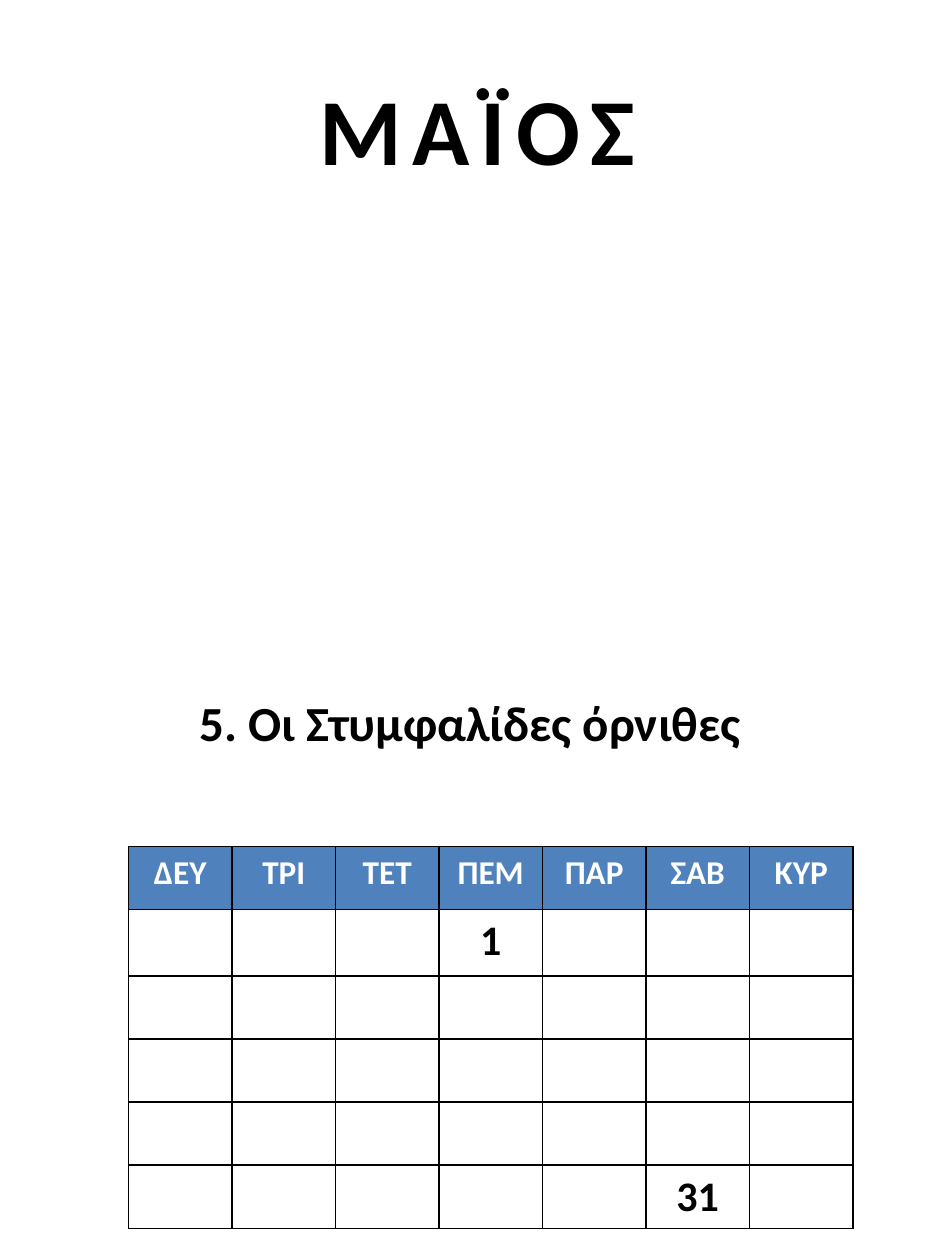
from lxml.etree import SubElement
from pptx import Presentation
from pptx.dml.color import RGBColor
from pptx.enum.text import MSO_ANCHOR, MSO_AUTO_SIZE, PP_ALIGN
from pptx.oxml import parse_xml
from pptx.oxml.ns import nsdecls, qn
from pptx.util import Pt

BLACK = RGBColor(0, 0, 0)
WHITE = RGBColor(255, 255, 255)
BLUE = RGBColor(0x4F, 0x81, 0xBD)

DAYS = ["ΔΕΥ", "ΤΡΙ", "ΤΕΤ", "ΠΕΜ", "ΠΑΡ", "ΣΑΒ", "ΚΥΡ"]
DATES = {(1, 3): "1", (5, 5): "31"}
ROW_HEIGHTS = [36, 38, 36, 36, 36, 36]
COLUMN_WIDTH = 59.14


def write(frame, text, size, color):
    """Write one centred bold line and return its run."""
    para = frame.paragraphs[0]
    para.alignment = PP_ALIGN.CENTER
    span = para.add_run()
    span.text = text
    span.font.color.rgb = color
    for name, value in {"name": "Calibri", "size": Pt(size), "bold": True}.items():
        setattr(span.font, name, value)
    return span


def line_xml(tag):
    """Return a black line of 1 pt under the given tag."""
    return parse_xml(
        f'<a:{tag} {nsdecls("a")} w="12700"><a:solidFill>'
        f'<a:srgbClr val="{BLACK}"/></a:solidFill></a:{tag}>'
    )


deck = Presentation()
deck.slide_width, deck.slide_height = Pt(540), Pt(720)
page = deck.slides.add_slide(deck.slide_layouts[5])

# Month title and the name of the labour
title = page.shapes.title
subtitle = page.shapes.add_textbox(0, 0, Pt(1), Pt(1))
for box, left, top, width, height in [
    (title, 43.2, 36.7, 459.4, 72.7),
    (subtitle, 82.8, 392.4, 371.5, 41),
]:
    box.left, box.top, box.width, box.height = Pt(left), Pt(top), Pt(width), Pt(height)
    frame = box.text_frame
    for name, value in {
        "word_wrap": True,
        "auto_size": MSO_AUTO_SIZE.SHAPE_TO_FIT_TEXT,
        "vertical_anchor": MSO_ANCHOR.TOP,
    }.items():
        setattr(frame, name, value)

month = write(title.text_frame, "ΜΑΪΟΣ", 54, BLACK)
month_format = month.font._element
month_format.set("spc", "600")
month_format.insert(0, line_xml("ln"))
write(subtitle.text_frame, "5. Οι Στυµφαλίδες όρνιθες", 28, BLACK)

# Calendar grid
calendar = page.shapes.add_table(
    len(ROW_HEIGHTS), len(DAYS), Pt(73.44), Pt(483.84),
    Pt(COLUMN_WIDTH * len(DAYS)), Pt(sum(ROW_HEIGHTS)),
).table
calendar.horz_banding = False
for column in calendar.columns:
    column.width = Pt(COLUMN_WIDTH)

for row, height in enumerate(ROW_HEIGHTS):
    calendar.rows[row].height = Pt(height)
    for column, day in enumerate(DAYS):
        cell = calendar.cell(row, column)
        if row == 0:
            cell.fill.solid()
            cell.fill.fore_color.rgb = BLUE
            write(cell.text_frame, day, 19, WHITE)
        else:
            cell.fill.background()
            if (row, column) in DATES:
                write(cell.text_frame, DATES[row, column], 24, BLACK)
        # Borders stand before the fill in the cell properties
        for place, side in enumerate(["lnL", "lnR", "lnT", "lnB"]):
            cell._tc.get_or_add_tcPr().insert(place, line_xml(side))

deck.save("out.pptx")
